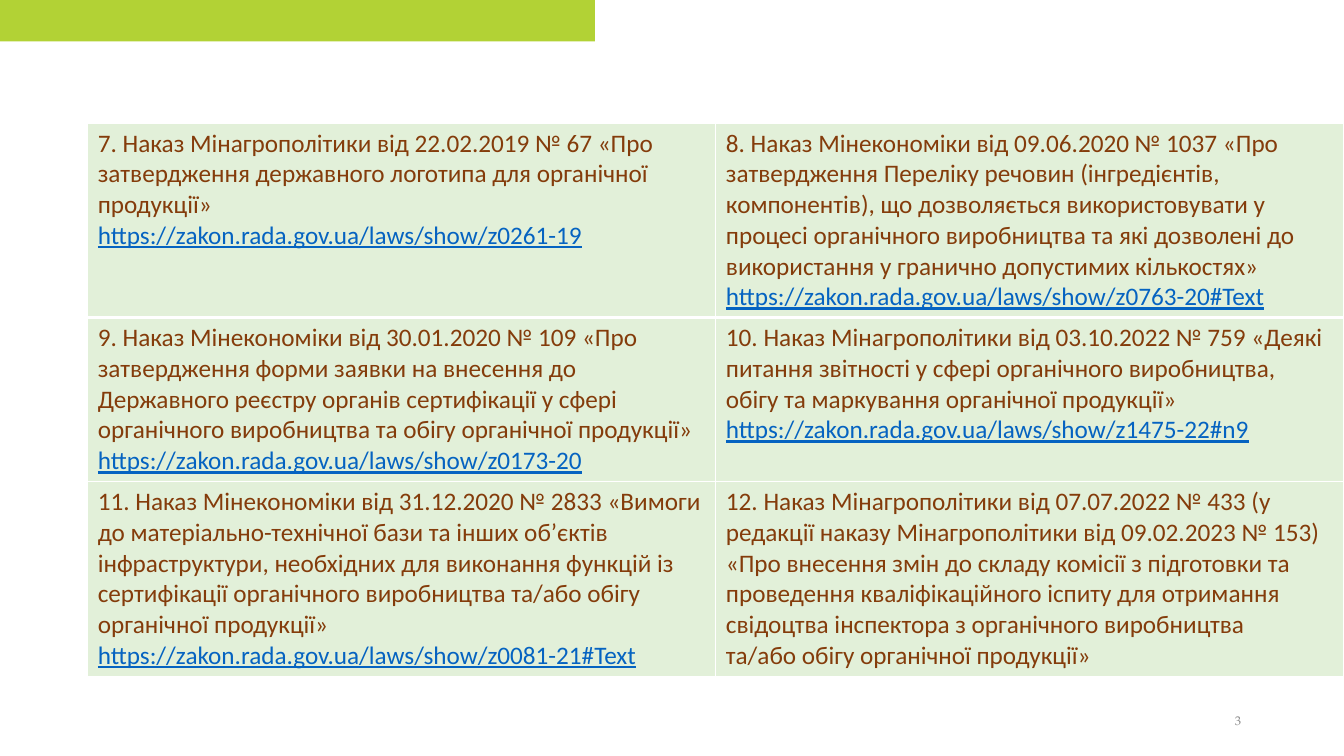
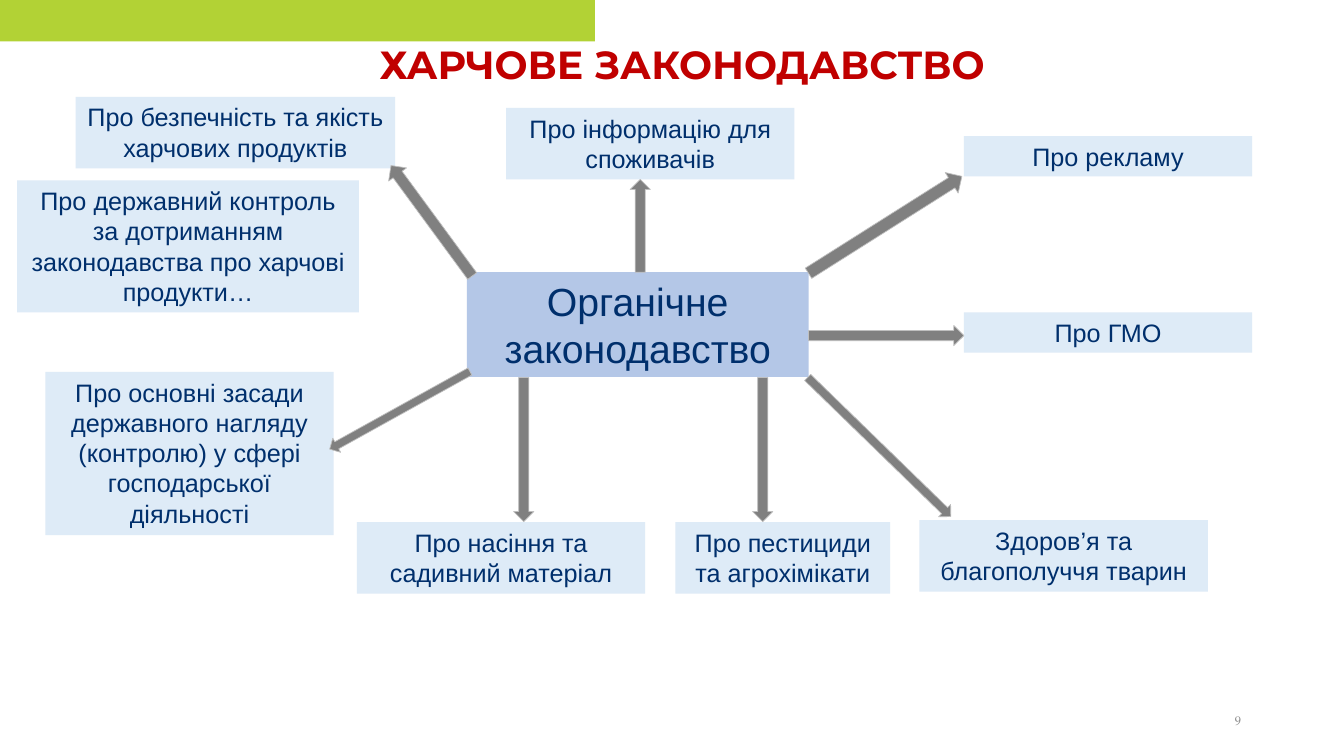
from lxml import etree
from pptx import Presentation
from pptx.dml.color import RGBColor
from pptx.enum.shapes import MSO_SHAPE
from pptx.enum.text import MSO_ANCHOR, MSO_AUTO_SIZE, PP_ALIGN
from pptx.oxml.ns import qn
from pptx.util import Inches, Pt

RECT, ARROW = MSO_SHAPE.RECTANGLE, MSO_SHAPE.RIGHT_ARROW
LEFT, CENTER, RIGHT = PP_ALIGN.LEFT, PP_ALIGN.CENTER, PP_ALIGN.RIGHT
TOP, MIDDLE = MSO_ANCHOR.TOP, MSO_ANCHOR.MIDDLE
GROW, FIXED = MSO_AUTO_SIZE.SHAPE_TO_FIT_TEXT, MSO_AUTO_SIZE.NONE
TITLE_ONLY, BLANK = 5, 6

COLORS = {
    "band": "B2D235", "number": "8C8C8C", "title": "C00000",
    "cell": "E2F0D9", "order": "843C0B", "link": "0563C1", "border": "FFFFFF",
    "law": "DEEBF7", "core": "B4C7E7", "navy": "002F6C",
    "arrow": "808080", "edge": "BFBFBF",
}


def color(name):
    return RGBColor.from_string(COLORS[name])


def place(left, top, width, height):
    return [Inches(n) for n in (left, top, width, height)]


class Deck:
    """Holds the style and the current slide."""

    def __init__(self):
        self.prs = Presentation()
        self.prs.slide_width, self.prs.slide_height = Inches(13.33), Inches(7.5)
        self.slide = None

    def page(self, number, title=None):
        layout = self.prs.slide_layouts[TITLE_ONLY if title else BLANK]
        self.slide = self.prs.slides.add_slide(layout)
        self.shape(RECT, (0, 0, 5.9, 0.41), "band")
        if title:
            self.title(title)
        box = self.slide.shapes.add_textbox(*place(11.94, 6.95, 0.47, 0.4))
        box.text_frame.text = number
        self.format(box.text_frame, "TeX Gyre Pagella", 9, "number", RIGHT, MIDDLE)

    def title(self, text):
        head = self.slide.shapes.title
        head.left, head.top, head.width, head.height = place(0.31, 0.35, 12.91, 0.57)
        head.text_frame.text = text
        self.format(head.text_frame, "Montserrat", 28, "title", bold=True)

    def format(self, frame, font, size, ink, align=CENTER, anchor=TOP,
               bold=False, fit=FIXED):
        frame.word_wrap = True
        frame.auto_size = fit
        frame.vertical_anchor = anchor
        for par in frame.paragraphs:
            par.alignment = align
            for run in par.runs:
                self.style(run.font, font, size, ink)
                run.font.bold = bold

    def style(self, target, font, size, ink):
        target.name, target.size = font, Pt(size)
        target.color.rgb = color(ink)

    def shape(self, kind, spot, fill, edge=None):
        item = self.slide.shapes.add_shape(kind, *place(*spot))
        item.shadow.inherit = False
        item.fill.solid()
        item.fill.fore_color.rgb = color(fill)
        if edge:
            item.line.color.rgb = color(edge)
            item.line.width = Pt(0.5)
        else:
            item.line.fill.background()
        return item

    def box(self, text, spot, fill="law", size=18):
        item = self.shape(RECT, spot, fill)
        item.text_frame.text = text
        self.format(item.text_frame, "Arial", size, "navy", fit=GROW)

    def arrow(self, spot, angle):
        self.shape(ARROW, spot, "arrow", "edge").rotation = angle

    def table(self, rows, spot, heights):
        frame = self.slide.shapes.add_table(len(rows), len(rows[0]), *place(*spot))
        grid = frame.table
        for col in grid.columns:
            col.width = Inches(spot[2] / len(rows[0]))
        for i, (row, height) in enumerate(zip(rows, heights)):
            grid.rows[i].height = Inches(height)
            for j, lines in enumerate(row):
                cell = grid.cell(i, j)
                self.cell(cell, lines)
                # A thicker rule runs below the first row
                self.border(cell, L=1, R=1, T=3 if i == 1 else 1, B=3 if i == 0 else 1)
                cell.fill.solid()
                cell.fill.fore_color.rgb = color("cell")

    def cell(self, cell, lines):
        cell.text_frame.text = "\n".join(lines)
        for par in cell.text_frame.paragraphs:
            link = par.text.startswith("https")
            for run in par.runs:
                self.style(run.font, "Calibri", 18, "link" if link else "order")
                run.font.bold, run.font.underline = False, link

    def border(self, cell, **sides):
        props = cell._tc.get_or_add_tcPr()
        for side, width in sides.items():
            line = etree.SubElement(props, qn("a:ln" + side), w=str(Pt(width)))
            fill = etree.SubElement(line, qn("a:solidFill"))
            etree.SubElement(fill, qn("a:srgbClr"), val=COLORS["border"])


SITE = "https://zakon.rada.gov.ua/laws/show/"
ORDERS = [
    [("7. Наказ Мінагрополітики від 22.02.2019 № 67 «Про затвердження державного "
      "логотипа для органічної продукції»", SITE + "z0261-19"),
     ("8. Наказ Мінекономіки від 09.06.2020 № 1037 «Про затвердження Переліку "
      "речовин (інгредієнтів, компонентів), що дозволяється використовувати у "
      "процесі органічного виробництва та які дозволені до використання у "
      "гранично допустимих кількостях»", SITE + "z0763-20#Text")],
    [("9. Наказ Мінекономіки від 30.01.2020 № 109 «Про затвердження форми заявки "
      "на внесення до Державного реєстру органів сертифікації у сфері "
      "органічного виробництва та обігу органічної продукції»", SITE + "z0173-20"),
     ("10. Наказ Мінагрополітики від 03.10.2022 № 759 «Деякі питання звітності у "
      "сфері органічного виробництва, обігу та маркування органічної продукції»",
      SITE + "z1475-22#n9")],
    [("11. Наказ Мінекономіки від 31.12.2020 № 2833 «Вимоги до "
      "матеріально-технічної бази та інших об’єктів інфраструктури, необхідних "
      "для виконання функцій із сертифікації органічного виробництва та/або "
      "обігу органічної продукції»", SITE + "z0081-21#Text"),
     ("12. Наказ Мінагрополітики від 07.07.2022 № 433 (у редакції наказу "
      "Мінагрополітики від 09.02.2023 № 153) «Про внесення змін до складу "
      "комісії з підготовки та проведення кваліфікаційного іспиту для отримання "
      "свідоцтва інспектора з органічного виробництва",
      "та/або обігу органічної продукції»")],
]

LAWS = [
    ("Про безпечність та якість харчових продуктів", (0.75, 0.96, 3.17, 0.71)),
    ("Про інформацію для споживачів", (5.02, 1.07, 2.86, 0.71)),
    ("Про рекламу", (9.56, 1.35, 2.86, 0.4)),
    ("Про державний контроль за дотриманням законодавства про харчові продукти…",
     (0.17, 1.79, 3.39, 1.31)),
    ("Про ГМО", (9.56, 3.1, 2.86, 0.4)),
    ("Про основні засади державного нагляду (контролю) у сфері господарської "
     "діяльності", (0.45, 3.69, 2.86, 1.62)),
    ("Про насіння та садивний матеріал", (3.54, 5.18, 2.86, 0.71)),
    ("Про пестициди та агрохімікати", (6.7, 5.18, 2.13, 0.71)),
    ("Здоров’я та благополуччя тварин", (9.12, 5.16, 2.86, 0.71)),
]

# Place before rotation, then the angle in degrees
ARROWS = [
    ((7.88, 2.11, 1.8, 0.24), 327.7),
    ((5.89, 2.14, 0.92, 0.2), 270),
    ((3.6, 2.08, 1.36, 0.22), 233.7),
    ((8.02, 3.23, 1.54, 0.2), 0),
    ((4.48, 4.36, 1.43, 0.2), 90),
    ((6.85, 4.36, 1.43, 0.2), 90),
    ((3.17, 3.99, 1.59, 0.16), 151),
    ((7.73, 4.35, 1.98, 0.17), 44.2),
]


def main():
    deck = Deck()

    # Table of orders
    deck.page("3")
    deck.table(ORDERS, (0.87, 1.22, 12.46, 5.4), (1.9, 1.6, 1.9))

    # Map of food laws around the organic law
    deck.page("9", "ХАРЧОВЕ ЗАКОНОДАВСТВО")
    deck.box("Органічне законодавство", (4.63, 2.7, 3.39, 1.04), "core", 28)
    for text, spot in LAWS:
        deck.box(text, spot)
    for spot, angle in ARROWS:
        deck.arrow(spot, angle)

    deck.prs.save("out.pptx")


if __name__ == "__main__":
    main()
